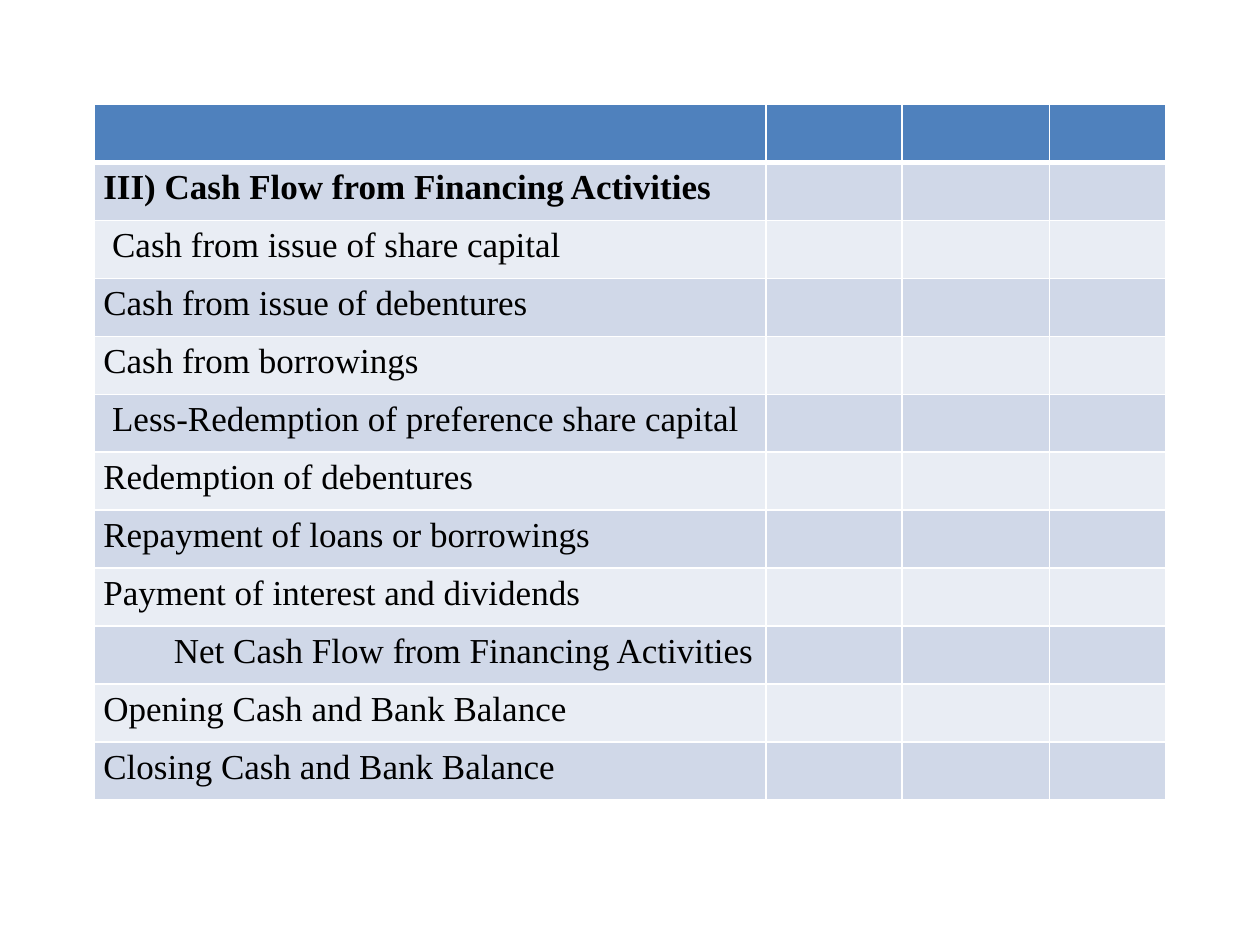
from dataclasses import dataclass

from lxml.etree import SubElement
from pptx import Presentation
from pptx.dml.color import RGBColor
from pptx.enum.text import MSO_ANCHOR
from pptx.oxml.ns import qn
from pptx.util import Inches, Pt


@dataclass(frozen=True)
class Theme:
    header: str = "4F81BD"
    bands: tuple = ("D0D8E8", "E9EDF4")
    rule: str = "FFFFFF"
    text: str = "000000"
    font: str = "Times New Roman"
    size: float = 20
    line_spacing: float = 1.15
    cell_margin: float = 0.07
    thin: float = 1
    thick: float = 3


# Each entry: wording, indent in inches
ENTRIES = [
    ("III) Cash Flow from Financing Activities", 0),
    ("Cash from issue of share capital", 0.07),
    ("Cash from issue of debentures", 0),
    ("Cash from borrowings", 0),
    ("Less-Redemption of preference share capital", 0.07),
    ("Redemption of debentures", 0),
    ("Repayment of loans or borrowings", 0),
    ("Payment of interest and dividends", 0),
    ("Net Cash Flow from Financing Activities", 0.56),
    ("Opening Cash and Bank Balance", 0),
    ("Closing Cash and Bank Balance", 0),
]
COLUMN_WIDTHS = [5.33, 1.08, 1.17, 0.92]
ROW_HEIGHT = 0.46


class SlideBuilder:
    def __init__(self, slide, theme):
        self.slide = slide
        self.theme = theme

    def borders(self, cell, top, bottom):
        """Draw the four cell edges; they must precede the fill in the XML."""
        properties = cell._tc.get_or_add_tcPr()
        thin = self.theme.thin
        for edge, weight in (("L", thin), ("R", thin), ("T", top), ("B", bottom)):
            line = SubElement(properties, qn(f"a:ln{edge}"), w=str(Pt(weight)))
            fill = SubElement(line, qn("a:solidFill"))
            SubElement(fill, qn("a:srgbClr"), val=self.theme.rule)

    def cell_style(self, cell, row):
        theme = self.theme
        self.borders(cell,
                     top=theme.thick if row == 1 else theme.thin,
                     bottom=theme.thick if row == 0 else theme.thin)
        color = theme.header if row == 0 else theme.bands[(row - 1) % 2]
        cell.fill.solid()
        cell.fill.fore_color.rgb = RGBColor.from_string(color)
        cell.margin_left = cell.margin_right = Inches(theme.cell_margin)
        cell.margin_top = cell.margin_bottom = 0
        cell.vertical_anchor = MSO_ANCHOR.TOP

    def cell_text(self, cell, wording, indent, bold):
        theme = self.theme
        cell.margin_left = Inches(theme.cell_margin + indent)
        cell.text_frame.text = wording
        paragraph = cell.text_frame.paragraphs[0]
        paragraph.line_spacing = theme.line_spacing
        font = paragraph.runs[0].font
        font.name = theme.font
        font.size = Pt(theme.size)
        font.bold = bold
        font.color.rgb = RGBColor.from_string(theme.text)

    def statement(self, left, top, entries, widths, row_height):
        row_count = len(entries) + 1
        table = self.slide.shapes.add_table(
            row_count, len(widths), Inches(left), Inches(top),
            Inches(sum(widths)), Inches(row_height * row_count)).table
        for column, width in zip(table.columns, widths):
            column.width = Inches(width)
        for index, row in enumerate(table.rows):
            row.height = Inches(row_height)
            for cell in row.cells:
                self.cell_style(cell, index)
        for index, (wording, indent) in enumerate(entries, start=1):
            self.cell_text(table.cell(index, 0), wording, indent, bold=index == 1)


def main():
    presentation = Presentation()
    presentation.slide_width = Inches(10)
    presentation.slide_height = Inches(7.5)
    blank_layout = presentation.slide_layouts[6]
    builder = SlideBuilder(presentation.slides.add_slide(blank_layout), Theme())

    # Cash flow statement: empty header row, then the financing entries
    builder.statement(0.75, 0.83, ENTRIES, COLUMN_WIDTHS, ROW_HEIGHT)

    presentation.save("out.pptx")


if __name__ == "__main__":
    main()
